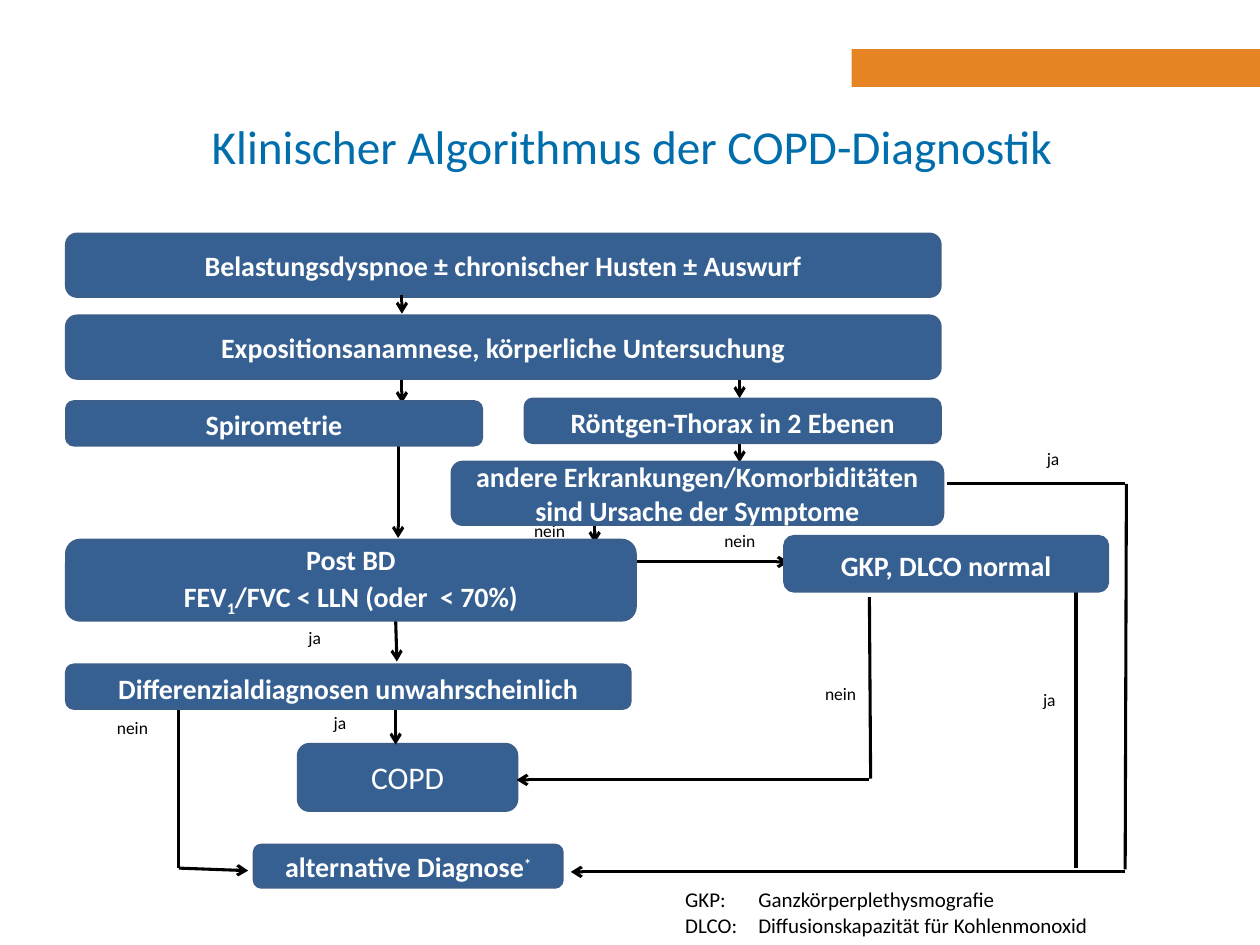
import pptx
import pptx.dml.color
import pptx.enum.shapes
import pptx.enum.text
import pptx.oxml
import pptx.oxml.ns
import pptx.util
from pptx.util import Inches

FONT = "Calibri"
BLUE, EDGE, ORANGE, TITLE = "376092", "3A5F8C", "E68323", "006EAC"
WHITE, BLACK = "FFFFFF", "000000"
SHAPES = pptx.enum.shapes.MSO_SHAPE
CENTER = pptx.enum.text.PP_ALIGN.CENTER
MIDDLE = pptx.enum.text.MSO_ANCHOR.MIDDLE
LEFT = 0.53  # left edge of the main column

# left, top, width, height, text, line spacing
START_BOXES = [
    (LEFT, 1.86, 6.93, 0.49, "Belastungsdyspnoe ± chronischer Husten ± Auswurf", None),
    (2.02, 6.71, 2.44, 0.33, "alternative Diagnose", None),
]
STEP_BOXES = [
    (LEFT, 2.51, 6.93, 0.49, "Expositionsanamnese, körperliche Untersuchung", None),
    (LEFT, 3.19, 3.29, 0.34, "Spirometrie", 1.07),
    (4.17, 3.17, 3.29, 0.34, "Röntgen-Thorax in 2 Ebenen", 1.07),
    (3.59, 3.67, 3.89, 0.49,
     "andere Erkrankungen/Komorbiditäten sind Ursache der Symptome", None),
    (LEFT, 5.28, 4.47, 0.34, "Differenzialdiagnosen unwahrscheinlich", 1.07),
    (6.23, 4.26, 2.56, 0.43, "GKP, DLCO normal", 1.07),
]
ARROWS = [
    (3.19, 2.34, 3.19, 2.49), (3.19, 3, 3.19, 3.2), (3.16, 3.51, 3.16, 4.27),
    (5.87, 2.96, 5.87, 3.16), (5.87, 3.51, 5.87, 3.67), (4.72, 3.95, 4.72, 4.31),
    (5.04, 4.46, 6.26, 4.46), (3.14, 4.91, 3.15, 5.25), (3.14, 5.56, 3.14, 5.91),
    (1.42, 6.89, 1.97, 6.91), (8.54, 6.92, 4.53, 6.92), (6.9, 6.19, 4.1, 6.19),
]
LINES = [
    (8.94, 3.84, 8.93, 6.9), (8.93, 3.84, 7.52, 3.84), (8.93, 6.92, 8.54, 6.92),
    (8.54, 4.69, 8.54, 6.89), (6.9, 4.74, 6.91, 6.18), (1.42, 5.6, 1.42, 6.89),
]
LABELS = [
    (5.65, 4.16, "nein"), (4.14, 4.08, "nein"), (6.45, 5.37, "nein"), (0.83, 5.64, "nein"),
    (2.35, 4.93, "ja"), (2.55, 5.6, "ja"), (8.18, 5.42, "ja"), (8.21, 3.51, "ja"),
]


def rgb(color):
    return pptx.dml.color.RGBColor.from_string(color)


def style(font, size, color, bold=False):
    font.name = FONT
    font.size = pptx.util.Pt(size)
    font.bold = bold
    font.color.rgb = rgb(color)


def add_run(paragraph, text, baseline=None):
    """Add a run; baseline is the raise or drop in percent."""
    run = paragraph.add_run()
    run.text = text
    if baseline:
        run.font._element.set("baseline", str(baseline * 1000))
    return run


def add_text(slide, left, top, width, height, lines, size, color=BLACK):
    shape = slide.shapes.add_textbox(*map(Inches, (left, top, width, height)))
    frame = shape.text_frame
    frame.word_wrap = True
    frame.text = "\n".join(lines)
    for paragraph in frame.paragraphs:
        style(paragraph.font, size, color)
    return frame


def add_box(slide, left, top, width, height, text, spacing=None, size=16, bold=True):
    """Add a flowchart box and return its text frame."""
    shape = slide.shapes.add_shape(
        SHAPES.FLOWCHART_ALTERNATE_PROCESS, *map(Inches, (left, top, width, height)))
    shape.shadow.inherit = False
    shape.fill.solid()
    shape.fill.fore_color.rgb = rgb(BLUE)
    shape.line.color.rgb = rgb(EDGE)
    shape.line.width = pptx.util.Pt(2)
    frame = shape.text_frame
    frame.word_wrap = True
    frame.vertical_anchor = MIDDLE
    frame.text = text
    for paragraph in frame.paragraphs:
        paragraph.alignment = CENTER
        style(paragraph.font, size, WHITE, bold)
    if spacing:
        space_out(frame.paragraphs[-1], spacing)
    return frame


def space_out(paragraph, spacing):
    paragraph.line_spacing = spacing
    paragraph.space_after = pptx.util.Pt(8)


def add_line(slide, ends, arrow=False):
    connector = slide.shapes.add_connector(
        pptx.enum.shapes.MSO_CONNECTOR.STRAIGHT, *map(Inches, ends))
    connector.line.color.rgb = rgb(BLACK)
    connector.line.width = pptx.util.Pt(1.75)
    if arrow:
        head = pptx.oxml.ns.qn("a:tailEnd")
        connector.line._get_or_add_ln().append(connector._element.makeelement(head, {"type": "arrow"}))
    properties = connector._element.spPr
    properties.append(properties.makeelement(pptx.oxml.ns.qn("a:effectLst"), {}))


def add_header(slide):
    bar = slide.shapes.add_shape(
        SHAPES.RECTANGLE, Inches(6.76), Inches(0.39), Inches(3.24), Inches(0.3))
    bar.shadow.inherit = False
    bar.fill.solid()
    bar.fill.fore_color.rgb = rgb(ORANGE)
    bar.line.fill.background()
    title = add_text(slide, 1.48, 0.69, 7.07, 0.93,
                     ["Klinischer Algorithmus der COPD-Diagnostik"], 27, TITLE)
    title.vertical_anchor = MIDDLE
    title.paragraphs[0].alignment = CENTER


def add_ratio_box(slide):
    frame = add_box(slide, LEFT, 4.29, 4.51, 0.63, "Post BD")
    paragraph = frame.add_paragraph()
    paragraph.alignment = CENTER
    space_out(paragraph, 1.07)
    style(paragraph.font, 16, WHITE, True)
    add_run(paragraph, "FEV")
    add_run(paragraph, "1", -25)
    add_run(paragraph, "/FVC < LLN (oder  < 70%)")


def add_legend(slide):
    frame = add_text(slide, 5.34, 6.99, 4.64, 0.5, [], 12)
    frame.text = "GKP:\tGanzkörperplethysmografie\nDLCO:\tDiffusionskapazität für Kohlenmonoxid"
    for paragraph in frame.paragraphs:
        properties = paragraph._element.get_or_add_pPr()
        tabs = properties.makeelement(pptx.oxml.ns.qn("a:tabLst"), {})
        tabs.append(tabs.makeelement(
            pptx.oxml.ns.qn("a:tab"), {"pos": str(Inches(0.58)), "algn": "l"}))
        properties.insert(0, tabs)
        style(paragraph.font, 12, BLACK)


def main():
    presentation = pptx.Presentation()
    presentation.slide_width, presentation.slide_height = Inches(10), Inches(7.5)
    slide = presentation.slides.add_slide(presentation.slide_layouts[6])
    add_header(slide)
    start, alternative = [add_box(slide, *box) for box in START_BOXES]
    star = add_run(alternative.paragraphs[0], "*", 30)
    star.font.size = pptx.util.Pt(14)
    add_box(slide, 2.37, 5.91, 1.73, 0.52, "COPD", size=18, bold=False)
    for ends in LINES:
        add_line(slide, ends)
    for ends in ARROWS:
        add_line(slide, ends, arrow=True)
    for left, top, text in LABELS:
        add_text(slide, left, top, 0.56, 0.27, [text], 10)
    for box in STEP_BOXES:
        add_box(slide, *box)
    add_ratio_box(slide)
    add_legend(slide)
    presentation.save("out.pptx")


if __name__ == "__main__":
    main()
